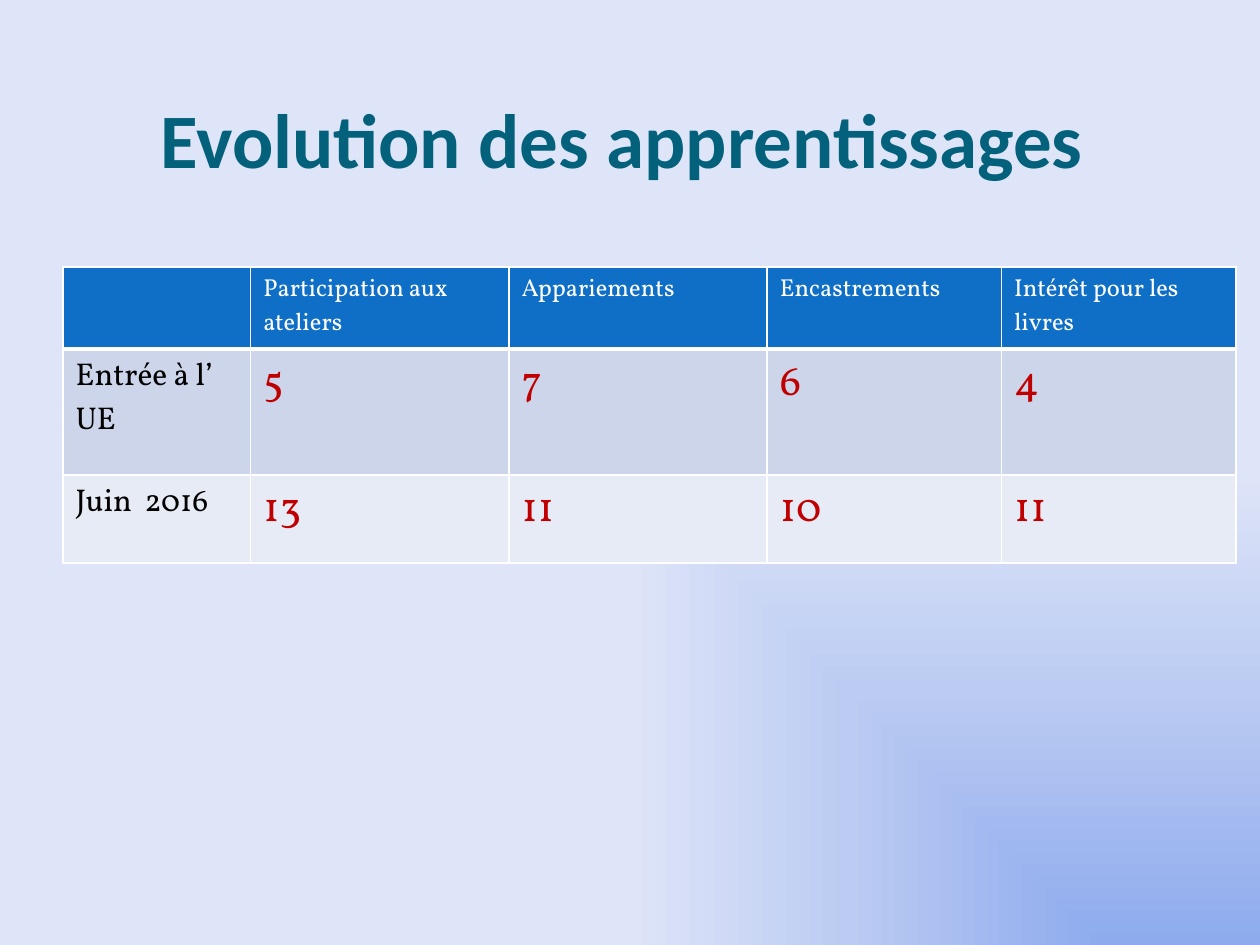
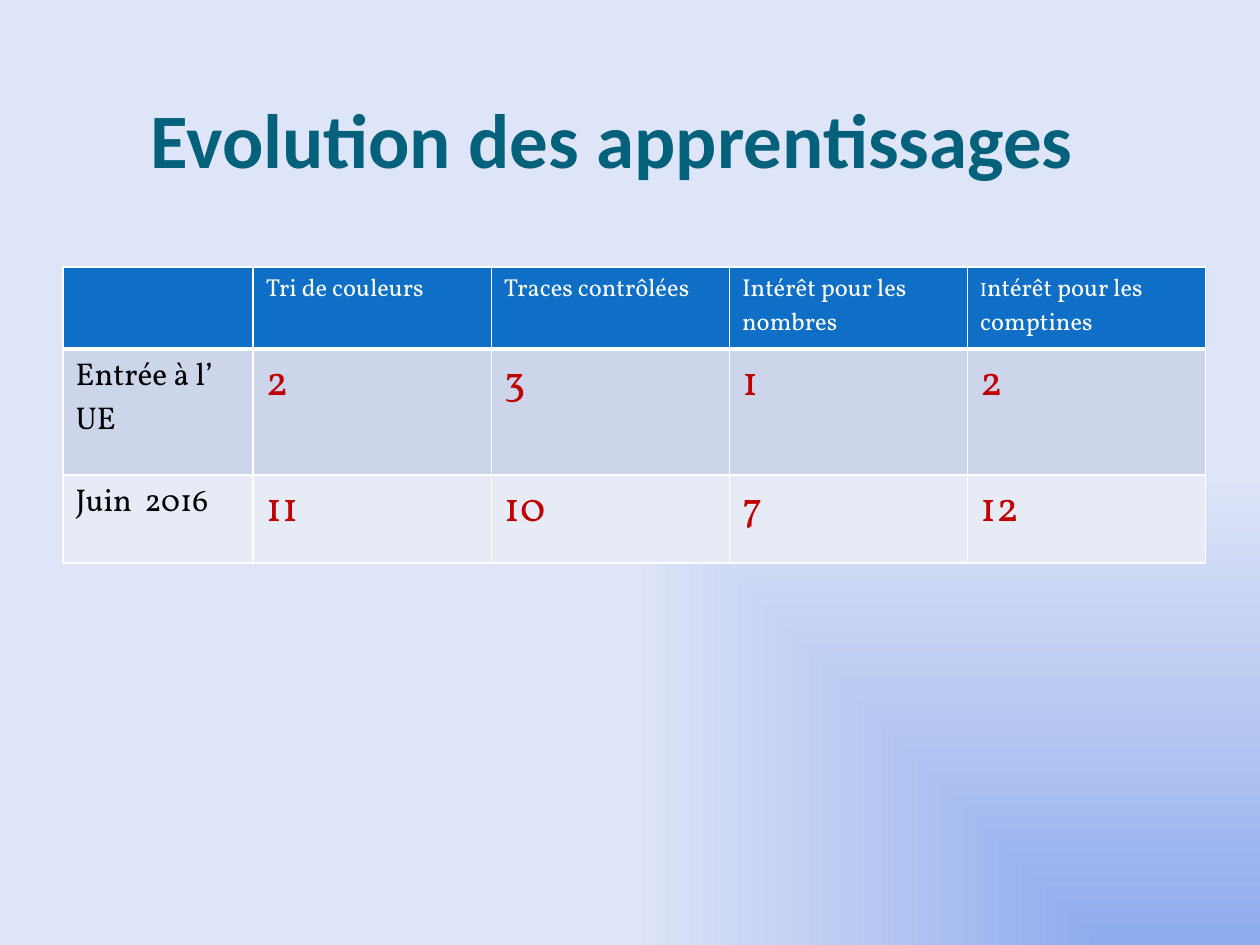
from pptx import Presentation
from pptx.dml.color import RGBColor
from pptx.enum.text import MSO_ANCHOR, PP_ALIGN
from pptx.oxml import parse_xml
from pptx.oxml.ns import qn
from pptx.util import Inches, Pt

BOTTOM = MSO_ANCHOR.BOTTOM
CENTER = PP_ALIGN.CENTER
A_NS = "http://schemas.openxmlformats.org/drawingml/2006/main"


def rgb(value):
    return RGBColor.from_string(value)


class Deck:
    TITLE_FONT, TABLE_FONT = "Calibri", "Vollkorn"
    TEAL, RED, BLACK, WHITE = "04617B", "C00000", "000000", "FFFFFF"
    ROW_FILLS = ("0F6FC6", "CCD5EA", "E7EBF5")
    ROW_HEIGHTS = (0.65, 1, 0.7)
    BACKGROUND = ((0, "8EABEE"), (54, "BBCBF2"), (100, "DEE5F8"))

    def __init__(self):
        self.prs = Presentation()
        self.prs.slide_width, self.prs.slide_height = Inches(10), Inches(7.5)
        self.background()

    def background(self):
        """Gradient spreading from the bottom right corner, on the master."""
        master = self.prs.slide_master
        master.background.fill.gradient()
        old = next(master.element.iter(qn("a:gradFill")))
        stops = "".join(
            f'<a:gs pos="{pos * 1000}"><a:srgbClr val="{color}"/></a:gs>'
            for pos, color in self.BACKGROUND)
        new = parse_xml(
            f'<a:gradFill xmlns:a="{A_NS}" rotWithShape="1">'
            f'<a:gsLst>{stops}</a:gsLst><a:path path="rect">'
            '<a:fillToRect l="100000" t="100000"/></a:path></a:gradFill>')
        old.getparent().replace(old, new)

    def slide(self):
        self.s = self.prs.slides.add_slide(self.prs.slide_layouts[6])

    def font(self, p, name, size, color, bold=False):
        p.font.name, p.font.size, p.font.bold = name, Pt(size), bold
        p.font.color.rgb = rgb(color)

    def title(self, text, left):
        box = self.s.shapes.add_textbox(
            Inches(left), Inches(0.21), Inches(9), Inches(1.25))
        tf = box.text_frame
        tf.word_wrap, tf.vertical_anchor = True, BOTTOM
        tf.margin_left = tf.margin_right = tf.margin_bottom = 0
        p = tf.paragraphs[0]
        p.text, p.alignment = text, CENTER
        self.font(p, self.TITLE_FONT, 44, self.TEAL, bold=True)

    def borders(self, cell, bottom):
        tcPr = cell._tc.get_or_add_tcPr()
        for i, (side, width) in enumerate(
                (("L", 1), ("R", 1), ("T", 1), ("B", bottom))):
            tcPr.insert(i, parse_xml(
                f'<a:ln{side} xmlns:a="{A_NS}" w="{Pt(width)}"><a:solidFill>'
                f'<a:srgbClr val="{self.WHITE}"/></a:solidFill></a:ln{side}>'))

    def table(self, widths, rows):
        table = self.s.shapes.add_table(
            len(rows), len(widths), Inches(0.5), Inches(2.12),
            Inches(sum(widths)), Inches(sum(self.ROW_HEIGHTS))).table
        for column, width in zip(table.columns, widths):
            column.width = Inches(width)
        for i, values in enumerate(rows):
            table.rows[i].height = Inches(self.ROW_HEIGHTS[i])
            for j, value in enumerate(values):
                cell = table.cell(i, j)
                cell.fill.solid()
                cell.fill.fore_color.rgb = rgb(self.ROW_FILLS[i])
                self.borders(cell, bottom=3 if i == 0 else 1)
                if i == 0:
                    size, color = 14, self.WHITE
                elif j == 0:
                    size, color = 18, self.BLACK
                else:
                    size, color = 24, self.RED
                p = cell.text_frame.paragraphs[0]
                if value:
                    p.text = value
                self.font(p, self.TABLE_FONT, size, color)
        return table


def main():
    deck = Deck()
    title = "Evolution des apprentissages "
    before, after = "Entrée à l’ UE", "Juin  2016"

    # Workshops, matching, puzzles and books
    deck.slide()
    deck.title(title, left=0.51)
    deck.table((1.49, 2.05, 2.05, 1.86, 1.86), (
        ("", "Participation aux ateliers", "Appariements", "Encastrements",
         "Intérêt pour les livres"),
        (before, "5", "7", "6", "4"),
        (after, "13", "11", "10", "11")))

    # Colours, tracing, numbers and rhymes
    deck.slide()
    deck.title(title, left=0.43)
    table = deck.table((1.51, 1.89, 1.89, 1.89, 1.89), (
        ("", "Tri de couleurs", "Traces contrôlées",
         "Intérêt pour les nombres", ""),
        (before, "2", "3", "1", "2"),
        (after, "11", "10", "7", "12")))

    # Last heading starts with a smaller letter
    p = table.cell(0, 4).text_frame.paragraphs[0]
    for text, size in (("I", 11), ("ntérêt pour les comptines", 14)):
        r = p.add_run()
        r.text, r.font.size = text, Pt(size)

    deck.prs.save("out.pptx")


if __name__ == "__main__":
    main()
